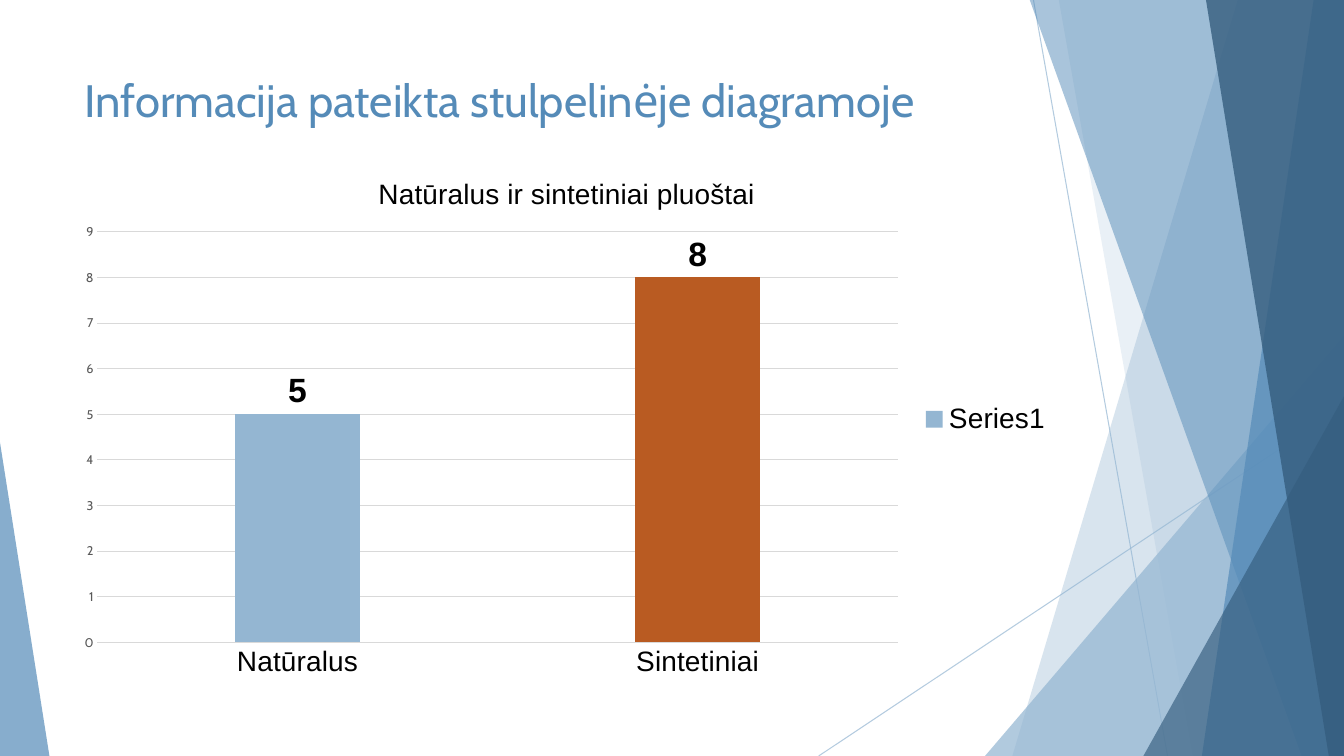
from lxml import etree
from pptx import Presentation
from pptx.chart.data import CategoryChartData
from pptx.dml.color import RGBColor
from pptx.enum.chart import XL_CHART_TYPE as ChartType
from pptx.enum.chart import XL_LABEL_POSITION as LabelPos
from pptx.enum.chart import XL_LEGEND_POSITION as LegendPos
from pptx.enum.chart import XL_TICK_MARK as Tick
from pptx.enum.shapes import MSO_CONNECTOR as Connector
from pptx.enum.shapes import MSO_SHAPE as Shape
from pptx.enum.text import MSO_ANCHOR as Anchor
from pptx.oxml import parse_xml
from pptx.oxml.ns import nsdecls, qn
from pptx.util import Inches, Pt

LIGHT, MID, DARK = "94B6D2", "558BB8", "355D7E"
ORANGE, GRID, GREY, BLACK = "B95B22", "D9D9D9", "595959", "000000"
TOP, BOTTOM, RIGHT = -0.01, 7.5, 13.33


def rgb(color):
    return RGBColor.from_string(color)


def set_font(font, size, color=BLACK, name="Arial", bold=False):
    font.size, font.name, font.bold = Pt(size), name, bold
    font.color.rgb = rgb(color)


def put_text(tf, text, **fmt):
    r = tf.paragraphs[0].add_run()
    r.text = text
    set_font(r.font, **fmt)


def set_alpha(fill_parent, percent):
    clr = fill_parent.find(".//" + qn("a:srgbClr"))
    etree.SubElement(clr, qn("a:alpha")).set("val", str(percent * 1000))


def manual_layout(target, **fractions):
    """Place a chart part by fractions of the chart area."""
    inner = '<c:layoutTarget val="inner"/>' if "w" in fractions else ""
    modes = '<c:xMode val="edge"/><c:yMode val="edge"/>'
    values = "".join(f'<c:{k} val="{v}"/>' for k, v in fractions.items())
    for old in target.findall(qn("c:layout")):
        target.remove(old)
    layout = parse_xml(f'<c:layout {nsdecls("c")}><c:manualLayout>{inner}{modes}'
                       f'{values}</c:manualLayout></c:layout>')
    tx = target.find(qn("c:tx"))
    target.insert(0 if tx is None else 1, layout)


class Deck:
    def __init__(self):
        self.prs = Presentation()
        self.prs.slide_width, self.prs.slide_height = Inches(13.33), Inches(7.5)
        self.s = self.prs.slides.add_slide(self.prs.slide_layouts[6])

    def paint(self, sp, color, alpha):
        sp.shadow.inherit = False
        sp.fill.solid()
        sp.fill.fore_color.rgb = rgb(color)
        sp.line.fill.background()
        set_alpha(sp.fill._xPr, alpha)

    def line(self, x1, y1, x2, y2):
        ln = self.s.shapes.add_connector(
            Connector.STRAIGHT, *map(Inches, (x1, y1, x2, y2)))
        ln.line.color.rgb = rgb(LIGHT)
        ln.line.width = Pt(0.75)
        sp_pr = ln._element.spPr
        set_alpha(sp_pr, 70)
        etree.SubElement(sp_pr, qn("a:effectLst"))

    def band(self, top_x, bottom_x, color, alpha):
        """Fill from a slanted left edge to the right side of the slide."""
        fb = self.s.shapes.build_freeform(Inches(top_x), Inches(TOP))
        fb.add_line_segments([(Inches(x), Inches(y)) for x, y in (
            (RIGHT, TOP), (RIGHT, BOTTOM), (bottom_x, BOTTOM))])
        self.paint(fb.convert_to_shape(), color, alpha)

    def triangle(self, x, y, w, apex, color, alpha):
        sp = self.s.shapes.add_shape(
            Shape.ISOSCELES_TRIANGLE, *map(Inches, (x, y, w, BOTTOM - y)))
        sp.adjustments[0] = apex
        self.paint(sp, color, alpha)

    def title(self, text, x, y, w, h):
        tf = self.s.shapes.add_textbox(*map(Inches, (x, y, w, h))).text_frame
        tf.word_wrap = True
        tf.vertical_anchor = Anchor.TOP
        put_text(tf, text, size=32.4, color=MID, name="Cabin")

    def column_chart(self, title, cats, vals, x, y, w, h):
        data = CategoryChartData()
        data.categories = cats
        data.add_series("Series1", vals)
        chart = self.s.shapes.add_chart(
            ChartType.COLUMN_CLUSTERED, *map(Inches, (x, y, w, h)), data).chart
        set_font(chart.font, 10, name="Cabin")

        # Title and legend
        chart.has_title = True
        put_text(chart.chart_title.text_frame, title, size=20)
        manual_layout(chart.chart_title._element, x=0.31, y=0.04)
        chart.has_legend = True
        chart.legend.position = LegendPos.RIGHT
        chart.legend.include_in_layout = False
        set_font(chart.legend.font, 20)

        # Axes
        cat, val = chart.category_axis, chart.value_axis
        for axis in (cat, val):
            axis.major_tick_mark = axis.minor_tick_mark = Tick.NONE
        set_font(cat.tick_labels.font, 20)
        set_font(val.tick_labels.font, 9, GREY, "Cabin")
        val.minimum_scale, val.maximum_scale, val.major_unit = 0, 9, 1
        val.format.line.fill.background()
        val.has_major_gridlines = True
        for ln in (cat.format.line, val.major_gridlines.format.line):
            ln.color.rgb = rgb(GRID)
            ln.width = Pt(0.75)

        # Columns and their labels
        plot = chart.plots[0]
        plot.gap_width, plot.overlap = 219, -27
        plot.vary_by_categories = False
        series = plot.series[0]
        for fmt, color in ((series.format, LIGHT),
                           (series.points[1].format, ORANGE)):
            fmt.fill.solid()
            fmt.fill.fore_color.rgb = rgb(color)
        labels = series.data_labels
        labels.show_value = True
        labels.position = LabelPos.OUTSIDE_END
        set_font(labels.font, 24, bold=True)
        manual_layout(chart._chartSpace.chart.plotArea,
                      x=0.034, y=0.153, w=0.801, h=0.76)


def main():
    deck = Deck()

    # Background facets, back to front
    deck.line(10.25, 0, 11.58, BOTTOM)
    deck.line(RIGHT, 4.03, 8.12, BOTTOM)
    deck.band(12.28, 10.04, LIGHT, 36)
    deck.band(10.5, 11.83, LIGHT, 20)
    deck.triangle(9.77, 3.33, 3.56, 1, LIGHT, 72)
    deck.band(10.21, 12.91, MID, 50)
    deck.band(13.03, 11.92, MID, 70)
    deck.band(11.96, 13.18, DARK, 80)
    deck.triangle(11.34, 3.93, 1.99, 1, DARK, 66)
    deck.triangle(0, 4.39, 0.49, 0, MID, 70)

    # Content
    deck.title("Informacija pateikta stulpelinėje diagramoje",
               0.74, 0.67, 12.37, 1.28)
    deck.column_chart("Natūralus ir sintetiniai pluoštai",
                      ("Natūralus", "Sintetiniai"), (5, 8),
                      0.63, 1.48, 9.91, 5.36)
    deck.prs.save("out.pptx")


if __name__ == "__main__":
    main()
